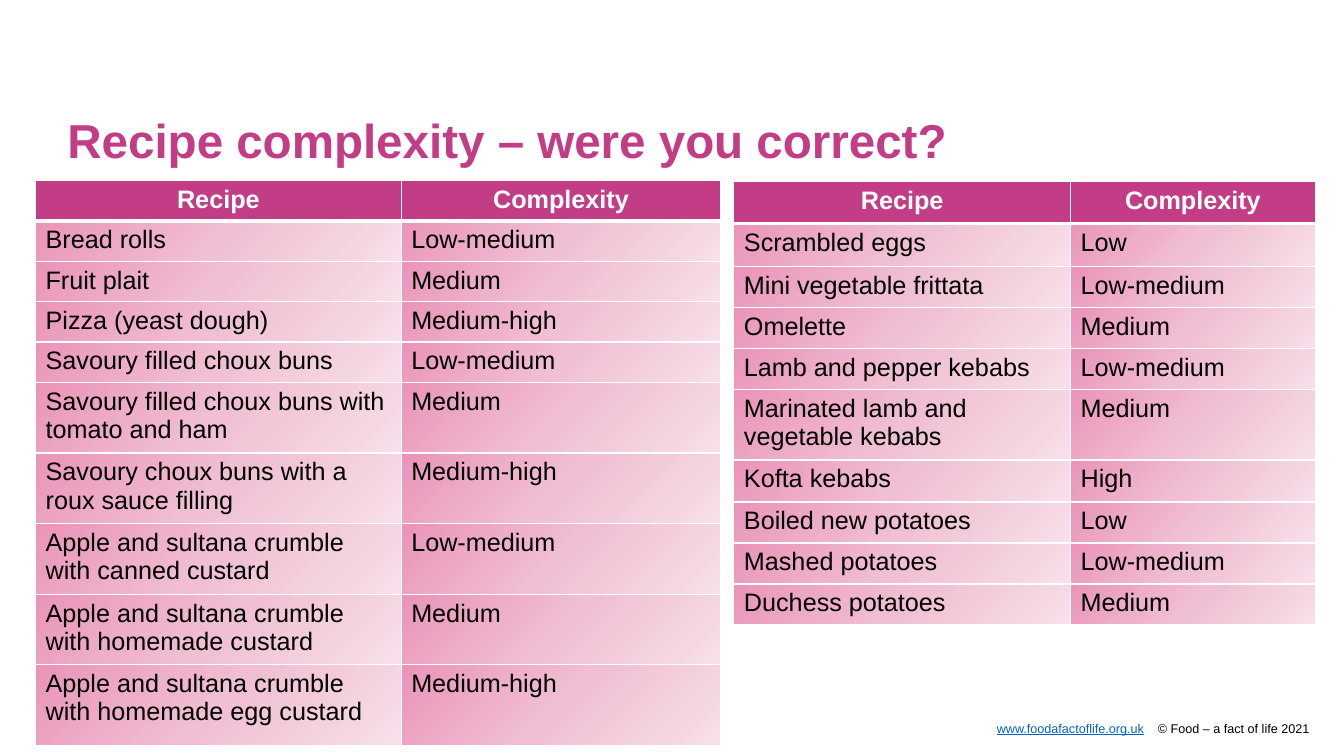
from pptx import Presentation
from pptx.dml.color import RGBColor
from pptx.enum.text import PP_ALIGN
from pptx.oxml import parse_xml
from pptx.util import Pt

CENTER, LEFT = PP_ALIGN.CENTER, PP_ALIGN.LEFT
NAMESPACE = 'xmlns:a="http://schemas.openxmlformats.org/drawingml/2006/main"'
PINK, WHITE, BLACK, LINK_BLUE = "C33D86", "FFFFFF", "000000", "0563C1"
GRADIENT = [(0, "EA94B9"), (50, "F0BFD3"), (100, "F7E0E9")]


def color(value):
    return RGBColor.from_string(value)


def add_text_box(left, top, width, height):
    frame = slide.shapes.add_textbox(Pt(left), Pt(top), Pt(width), Pt(height)).text_frame
    frame.margin_left = frame.margin_right = frame.margin_top = frame.margin_bottom = 0
    frame.word_wrap = True
    return frame.paragraphs[0]


presentation = Presentation()
presentation.slide_width, presentation.slide_height = Pt(960), Pt(540)
slide = presentation.slides.add_slide(presentation.slide_layouts[6])

footer = add_text_box(90.7, 514.8, 844.6, 10.8)
footer._p.get_or_add_pPr().append(parse_xml(
    f'<a:tabLst {NAMESPACE}><a:tab pos="{Pt(726.4)}" algn="r"/>'
    f'<a:tab pos="{Pt(736.4)}" algn="l"/></a:tabLst>'))
footer.font.size, footer.font.name = Pt(9), "Arial"
for text, text_color, underline in [
    ("\t", BLACK, False),
    ("www.foodafactoflife.org.uk", LINK_BLUE, True),
    ("\t© Food – a fact of life 2021", BLACK, False),
]:
    run = footer.add_run()
    run.text = text
    run.font.color.rgb = color(text_color)
    run.font.underline = underline

title = add_text_box(48.2, 83.5, 765.4, 56.9)
title.text = "Recipe complexity – were you correct?"
title.line_spacing = 0.9
title.font.size, title.font.name, title.font.bold = Pt(34), "Arial", True
title.font.color.rgb = color(PINK)

HEADER = ("Recipe", "Complexity")
baking_recipes = [
    HEADER,
    ("Bread rolls", "Low-medium"),
    ("Fruit plait", "Medium"),
    ("Pizza (yeast dough)", "Medium-high"),
    ("Savoury filled choux buns", "Low-medium"),
    ("Savoury filled choux buns with tomato and ham", "Medium"),
    ("Savoury choux buns with a roux sauce filling", "Medium-high"),
    ("Apple and sultana crumble with canned custard", "Low-medium"),
    ("Apple and sultana crumble with homemade custard", "Medium"),
    ("Apple and sultana crumble with homemade egg custard", "Medium-high"),
]
savoury_recipes = [
    HEADER,
    ("Scrambled eggs", "Low"),
    ("Mini vegetable frittata", "Low-medium"),
    ("Omelette", "Medium"),
    ("Lamb and pepper kebabs", "Low-medium"),
    ("Marinated lamb and vegetable kebabs", "Medium"),
    ("Kofta kebabs", "High"),
    ("Boiled new potatoes", "Low"),
    ("Mashed potatoes", "Low-medium"),
    ("Duchess potatoes", "Medium"),
]
tables = [
    (25.4, 129, (261.2, 228.4), [28.1] * 5 + [49.3] * 4 + [57.6], baking_recipes),
    (524.2, 129.8, (240.5, 174.8),
     [29.9, 30.6] + [29.3] * 3 + [47.5, 30] + [29.3] * 3, savoury_recipes),
]
gradient_stops = "".join(
    f'<a:gs pos="{position * 1000}"><a:srgbClr val="{stop}"/></a:gs>'
    for position, stop in GRADIENT)

for left, top, widths, heights, recipes in tables:
    table = slide.shapes.add_table(
        len(recipes), 2, Pt(left), Pt(top), Pt(sum(widths)), Pt(sum(heights))).table
    table.horz_banding = False
    for column, width in zip(table.columns, widths):
        column.width = Pt(width)
    for row_index, (height, texts) in enumerate(zip(heights, recipes)):
        table.rows[row_index].height = Pt(height)
        is_header = row_index == 0
        for column_index, text in enumerate(texts):
            cell = table.cell(row_index, column_index)
            properties = cell._tc.get_or_add_tcPr()
            for side in "LRTB":
                heavy = (side == "B" and is_header) or (side == "T" and row_index == 1)
                properties.append(parse_xml(
                    f'<a:ln{side} {NAMESPACE} w="{Pt(3 if heavy else 1)}"><a:solidFill>'
                    f'<a:srgbClr val="{WHITE}"/></a:solidFill></a:ln{side}>'))
            if is_header:
                cell.fill.solid()
                cell.fill.fore_color.rgb = color(PINK)
            else:
                properties.append(parse_xml(
                    f'<a:gradFill {NAMESPACE}><a:gsLst>{gradient_stops}</a:gsLst>'
                    '<a:lin ang="2700000" scaled="0"/></a:gradFill>'))
            paragraph = cell.text_frame.paragraphs[0]
            paragraph.text = text
            paragraph.alignment = CENTER if is_header else LEFT
            paragraph.font.size, paragraph.font.name = Pt(18), "Arial"
            paragraph.font.bold = is_header
            paragraph.font.color.rgb = color(WHITE if is_header else BLACK)

presentation.save("out.pptx")
